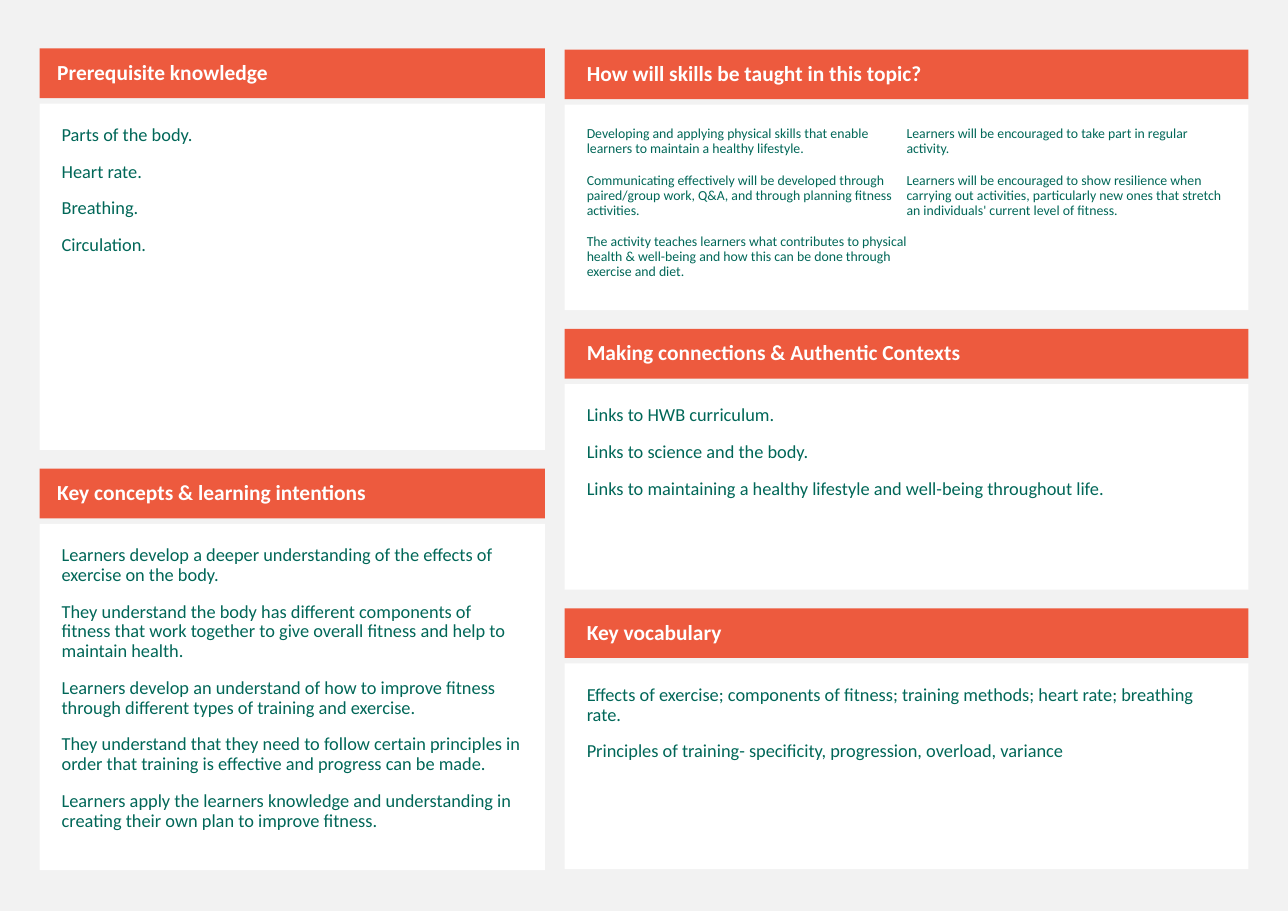
from pptx import Presentation
from pptx.dml.color import RGBColor
from pptx.enum.shapes import MSO_SHAPE
from pptx.enum.text import MSO_ANCHOR, PP_ALIGN
from pptx.util import Inches, Pt

WIDE, HIGH = 11.69, 8.27
SIDE, GUTTER = 0.36, 0.18
GAP = 0.17    # between stacked panels
HEAD = 0.45   # height of a heading bar
STEP = 0.5    # from the top of a heading to its body
ENDS = 8.34   # top plus bottom edge of every column
FREE = WIDE - 2 * SIDE - GUTTER
SHARE = 0.425  # left column's share of the free width

COLORS = {"page": "F2F2F2", "bar": "ED5A3E", "card": "FFFFFF",
          "title": "FFFFFF", "text": "006758"}

# Each panel: heading, body paragraphs, text size, text columns
LEFT = [
    ("Prerequisite knowledge",
     ["Parts of the body.", "Heart rate.", "Breathing.", "Circulation."], 12, 1),
    ("Key concepts & learning intentions",
     ["Learners develop a deeper understanding of the effects of exercise on the body.",
      "They understand the body has different components of fitness that work "
      "together to give overall fitness and help to maintain health.",
      "Learners develop an understand of how to improve fitness through different "
      "types of training and exercise.",
      "They understand that they need to follow certain principles in order that "
      "training is effective and progress can be made.",
      "Learners apply the learners knowledge and understanding in creating their "
      "own plan to improve fitness."], 12, 1),
]
RIGHT = [
    ("How will skills be taught in this topic?",
     ["Developing and applying physical skills that enable learners to maintain "
      "a healthy lifestyle.",
      "Communicating effectively will be developed through paired/group work, "
      "Q&A, and through planning fitness activities.",
      "The activity teaches learners what contributes to physical health & "
      "well-being and how this can be done through exercise and diet.",
      "Learners will be encouraged to take part in regular activity.",
      "Learners will be encouraged to show resilience when carrying out "
      "activities, particularly new ones that stretch an individuals' current "
      "level of fitness."], 9, 2),
    ("Making connections & Authentic Contexts",
     ["Links to HWB curriculum.", "Links to science and the body.",
      "Links to maintaining a healthy lifestyle and well-being throughout life."],
     12, 1),
    ("Key vocabulary",
     ["Effects of exercise; components of fitness; training methods; heart rate; "
      "breathing rate.",
      "Principles of training- specificity, progression, overload, variance"],
     12, 1),
]


def paint(fill, name):
    fill.solid()
    fill.fore_color.rgb = RGBColor.from_string(COLORS[name])


def add_box(slide, area, fill, lines, size, color, pads, bold=False):
    """Add a filled rectangle with one paragraph per line; return its frame."""
    box = slide.shapes.add_shape(MSO_SHAPE.RECTANGLE, *map(Inches, area))
    box.shadow.inherit = False
    paint(box.fill, fill)
    box.line.fill.background()
    frame = box.text_frame
    frame.word_wrap = True
    frame.margin_left, frame.margin_top, frame.margin_right, frame.margin_bottom = (
        map(Inches, pads))
    frame.text = "\n".join(lines)
    for para in frame.paragraphs:
        para.alignment = PP_ALIGN.LEFT
        para.line_spacing = 0.9
        para.space_before = Pt(11)
        for run in para.runs:
            run.font.name = "Calibri"
            run.font.size = Pt(size)
            run.font.bold = bold
            run.font.color.rgb = RGBColor.from_string(COLORS[color])
    return frame


def add_panel(slide, left, top, width, height, panel, inset):
    title, lines, size, cols = panel
    body = add_box(slide, (left, top + STEP, width, height - STEP), "card",
                   lines, size, "text", (0.2,) * 4)
    body.vertical_anchor = MSO_ANCHOR.TOP
    if cols > 1:
        body._txBody.bodyPr.set("numCol", str(cols))
    head = add_box(slide, (left, top, width, HEAD), "bar", [title], 14,
                   "title", (inset, 0.05, 0.1, 0.05), bold=True)
    head.vertical_anchor = MSO_ANCHOR.MIDDLE


def add_stack(slide, left, top, width, panels, inset):
    """Share a column's height equally among its panels."""
    pitch = (ENDS - 2 * top + GAP) / len(panels)
    for row, panel in enumerate(panels):
        add_panel(slide, left, top + row * pitch, width, pitch - GAP, panel, inset)


def main():
    deck = Presentation()
    deck.slide_width, deck.slide_height = Inches(WIDE), Inches(HIGH)
    slide = deck.slides.add_slide(deck.slide_layouts[6])
    paint(slide.background.fill, "page")
    width = SHARE * FREE
    add_stack(slide, SIDE, 0.44, width, LEFT, 0.16)
    add_stack(slide, SIDE + width + GUTTER, 0.45, FREE - width, RIGHT, 0.2)
    deck.save("out.pptx")


if __name__ == "__main__":
    main()
